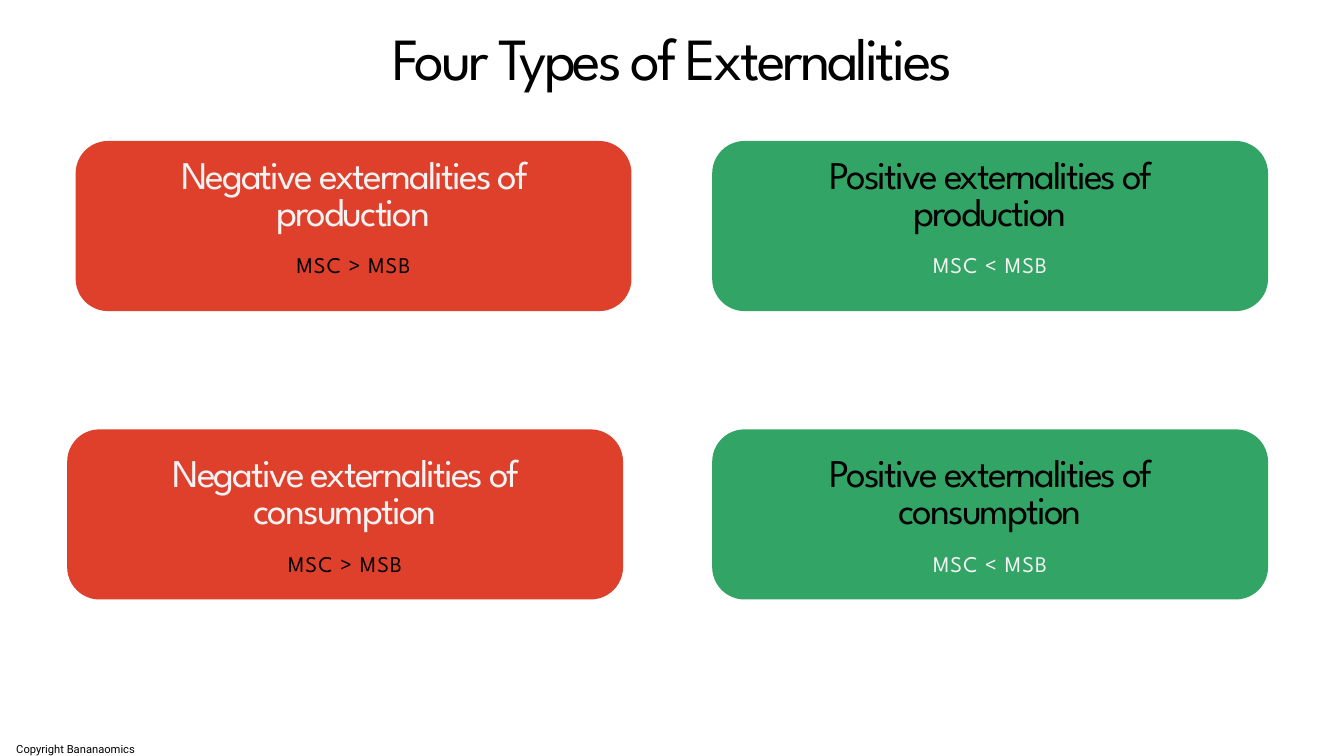
import pptx
import pptx.dml.color
import pptx.enum.shapes
import pptx.enum.text
import pptx.util
from pptx.util import Cm

COLOURS = {
    "background": "FFFFFF",
    "negative": "DF402B",
    "positive": "32A566",
    "dark": "000000",
    "light": "F4F2F3",
}
CARD_WIDTH, CARD_HEIGHT = 21.01, 6.43
TOP_ROW, BOTTOM_ROW = 5.33, 16.23
POSITIVE_LEFT = 26.92


def colour(name):
    """Return the named colour."""
    return pptx.dml.color.RGBColor.from_string(COLOURS[name])


def add_text(slide, box, text, size, line_spacing, colour_name="dark",
             tracking=0, font_name="League Spartan"):
    """Place one centred paragraph in a box given in centimetres."""
    shape = slide.shapes.add_textbox(*(Cm(length) for length in box))
    frame = shape.text_frame
    frame.word_wrap = True
    frame.margin_left = frame.margin_right = 0
    frame.margin_top = frame.margin_bottom = 0
    paragraph = frame.paragraphs[0]
    paragraph.alignment = pptx.enum.text.PP_ALIGN.CENTER
    paragraph.line_spacing = pptx.util.Pt(line_spacing)
    run = paragraph.add_run()
    run.text = text
    run.font.name = font_name
    run.font.size = pptx.util.Pt(size)
    run.font.color.rgb = colour(colour_name)
    if tracking:
        run.font._element.set("spc", str(round(tracking * 100)))


def add_card(slide, left, top, kind, activity, text_offset):
    """Draw one externality card with its heading and its condition."""
    shape = slide.shapes.add_shape(
        pptx.enum.shapes.MSO_SHAPE.ROUNDED_RECTANGLE,
        Cm(left), Cm(top), Cm(CARD_WIDTH), Cm(CARD_HEIGHT))
    shape.adjustments[0] = 0.19
    shape.shadow.inherit = False
    shape.fill.solid()
    shape.fill.fore_color.rgb = colour(kind)
    shape.line.fill.background()

    negative = kind == "negative"
    heading_colour, condition_colour = ("light", "dark") if negative else ("dark", "light")
    sign = ">" if negative else "<"
    text_width = 17.58
    text_left = left + (CARD_WIDTH - text_width) / 2
    text_top = top + text_offset
    add_text(slide, (text_left, text_top, text_width, 3),
             f"{kind.capitalize()} externalities of {activity}",
             42, 39.9, heading_colour, -2.1)
    add_text(slide, (text_left, text_top + 3.38, text_width, 1.07),
             f"MSC {sign} MSB", 24, 31.2, condition_colour, 1.2)


def add_title(slide, box):
    """Place the slide title."""
    add_text(slide, box, "Four Types of Externalities", 64, 60.8, tracking=-3.2)


def add_footer(slide, box):
    """Place the copyright line."""
    add_text(slide, box, "Copyright Bananaomics", 12, 16.8, font_name="Roboto")


def main():
    """Build and save the slide."""
    presentation = pptx.Presentation()
    presentation.slide_width = Cm(50.8)
    presentation.slide_height = Cm(28.575)
    slide = presentation.slides.add_slide(presentation.slide_layouts[6])
    slide.background.fill.solid()
    slide.background.fill.fore_color.rgb = colour("background")

    add_title(slide, (1.68, 1.35, 47.45, 2.57))
    add_footer(slide, (0, 27.96, 5.72, 0.61))
    for activity, top, negative_left, text_offset in (
            ("production", TOP_ROW, 2.86, 0.71),
            ("consumption", BOTTOM_ROW, 2.54, 1.09)):
        add_card(slide, negative_left, top, "negative", activity, text_offset)
        add_card(slide, POSITIVE_LEFT, top, "positive", activity, text_offset)

    presentation.save("out.pptx")


if __name__ == "__main__":
    main()
